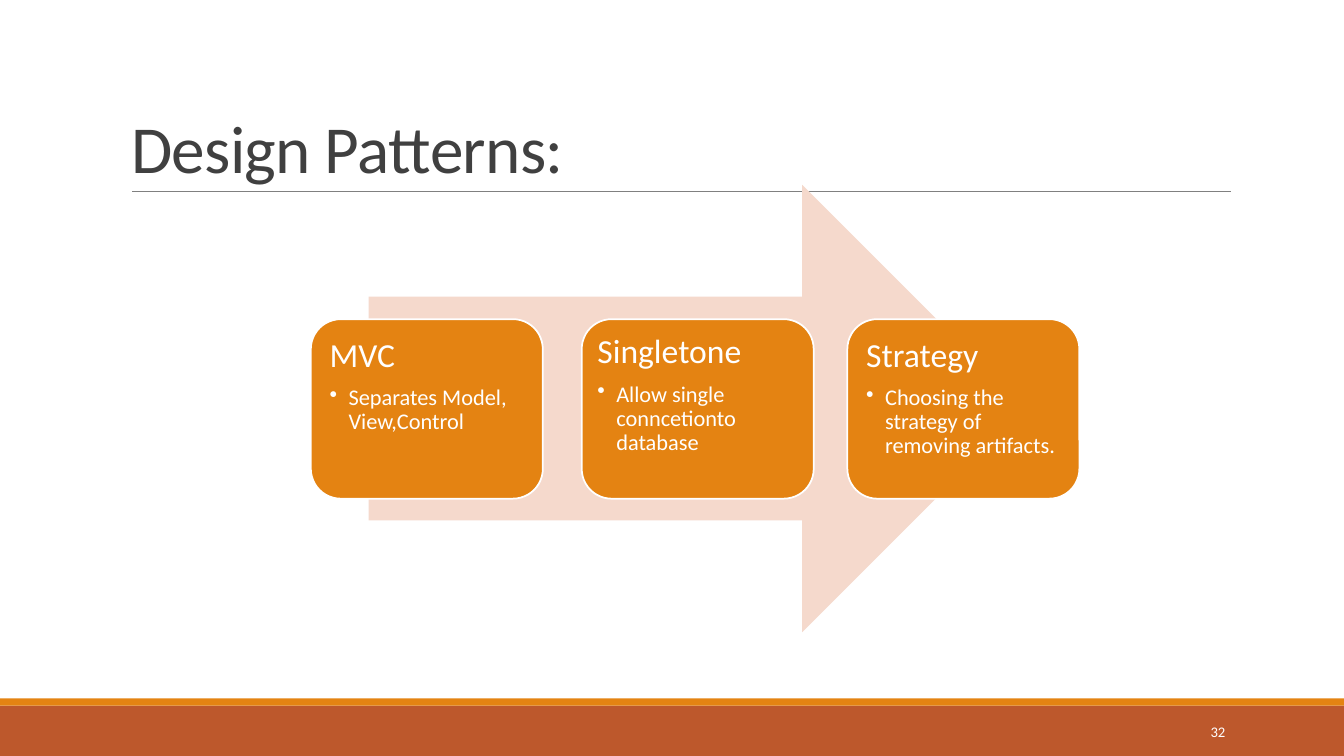
from dataclasses import dataclass

from lxml.etree import SubElement
from pptx import Presentation
from pptx.dml.color import RGBColor
from pptx.enum.shapes import MSO_CONNECTOR as Connector
from pptx.enum.shapes import MSO_SHAPE as Shape
from pptx.enum.text import MSO_ANCHOR as Anchor
from pptx.enum.text import PP_ALIGN as Align
from pptx.oxml.ns import qn
from pptx.util import Pt

PX = 9525


@dataclass(frozen=True)
class Theme:
    font: str = "Calibri"
    white: str = "FFFFFF"
    ink: str = "404040"
    rule: str = "808080"
    orange: str = "E48312"
    rust: str = "BD582C"
    blush: str = "F5D9CC"
    title_size: float = 48
    heading_size: float = 24
    bullet_size: float = 16
    number_size: float = 10.5


theme = Theme()
deck = Presentation()
deck.slide_width = 1280 * PX
deck.slide_height = 720 * PX
page = deck.slides.add_slide(deck.slide_layouts[6])


def add_block(kind, left, top, width, height, fill):
    block = page.shapes.add_shape(kind, left * PX, top * PX, width * PX, height * PX)
    block.shadow.inherit = False
    block.fill.solid()
    block.fill.fore_color.rgb = RGBColor.from_string(fill)
    block.line.fill.background()
    return block


def add_text(left, top, width, height, inset, anchor, lines):
    box = page.shapes.add_textbox(left * PX, top * PX, width * PX, height * PX)
    frame = box.text_frame
    frame.word_wrap = True
    frame.vertical_anchor = anchor
    frame.margin_left = frame.margin_right = inset * PX
    frame.margin_top = frame.margin_bottom = min(inset, inset if anchor == Anchor.TOP else 5) * PX
    for index, (wording, size, color, spacing) in enumerate(lines):
        para = frame.add_paragraph() if index else frame.paragraphs[0]
        para.line_spacing = spacing
        span = para.add_run()
        span.text = wording
        span.font.name = theme.font
        span.font.size = Pt(size)
        span.font.color.rgb = RGBColor.from_string(color)
    return frame.paragraphs


add_block(Shape.RECTANGLE, 0, 672, 1280, 48, theme.rust)
add_block(Shape.RECTANGLE, 0, 665, 1280, 7, theme.orange)

rule = page.shapes.add_connector(Connector.STRAIGHT, 126 * PX, 182 * PX, 1172 * PX, 182 * PX)
rule.line.color.rgb = RGBColor.from_string(theme.rule)
rule.line.width = Pt(0.5)
SubElement(rule._element.spPr, qn("a:effectLst"))

title = add_text(115, 30, 1056, 153, 10, Anchor.BOTTOM,
                 [("Design Patterns:", theme.title_size, theme.ink, 0.85)])
title[0].runs[0].font._element.set("spc", "-50")

add_block(Shape.RIGHT_ARROW, 351, 176, 626, 426, theme.blush)

patterns = [
    (296, 10, "MVC", "Separates Model, View,Control"),
    (554, 7, "Singletone", "Allow single conncetionto database"),
    (807, 10, "Strategy", "Choosing the strategy of removing artifacts."),
]
for left, inset, name, purpose in patterns:
    card = add_block(Shape.ROUNDED_RECTANGLE, left, 304, 221, 171, theme.orange)
    card.line.color.rgb = RGBColor.from_string(theme.white)
    card.line.width = Pt(1.25)
    heading, bullet = add_text(left + 8, 312, 204, 154, inset, Anchor.TOP, [
        (name, theme.heading_size, theme.white, 0.9),
        (purpose, theme.bullet_size, theme.white, 0.9),
    ])
    heading.space_after = Pt(8.4)
    bullet.space_after = Pt(2.4)
    bullet.level = 1
    properties = bullet._p.get_or_add_pPr()
    properties.set("marL", str(18 * PX))
    properties.set("indent", str(-18 * PX))
    SubElement(properties, qn("a:buChar"), char="•")

number = add_text(1040, 678, 137, 38, 10, Anchor.MIDDLE,
                  [("32", theme.number_size, theme.white, 1.0)])
number[0].alignment = Align.RIGHT

deck.save("out.pptx")
